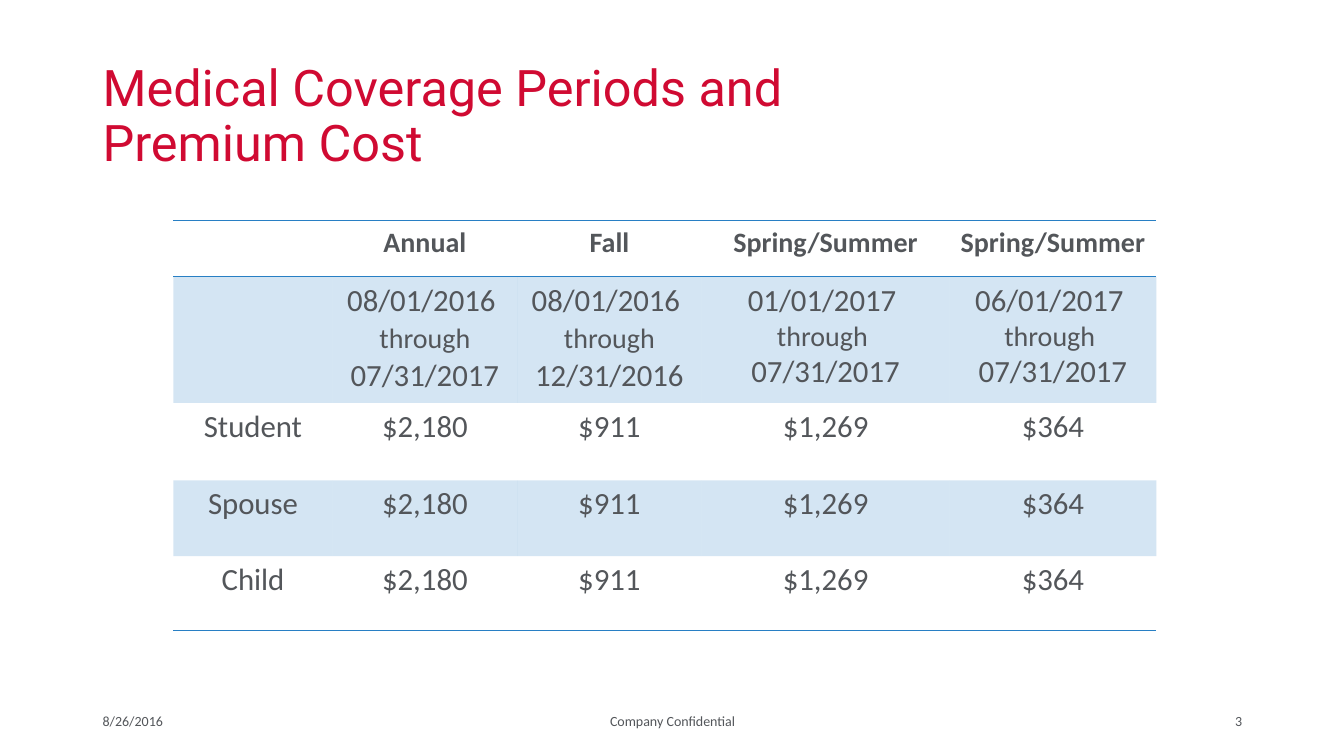
from dataclasses import dataclass

from lxml.etree import SubElement
from pptx import Presentation
from pptx.dml.color import RGBColor
from pptx.enum.text import MSO_ANCHOR, PP_ALIGN
from pptx.oxml.ns import qn
from pptx.util import Emu, Inches, Pt

SLIDE_WIDTH, SLIDE_HEIGHT = Inches(13.33), Inches(7.5)
NO_STYLE_NO_GRID = "{2D5ABB26-0587-4C30-8999-92F81FD0307C}"


@dataclass(frozen=True)
class Theme:
    red: str = "D00A32"
    gray: str = "53565A"
    blue: str = "287FC4"
    band_opacity: int = 20  # percent
    rule_width: int = 1
    heading_font: str = "Roboto"
    body_font: str = "Calibri"
    title: int = 36
    header: int = 20
    body: int = 22
    footer: int = 10


THEME = Theme()


@dataclass(frozen=True)
class Span:
    text: str
    size: int = THEME.body
    bold: bool = False
    font: str = THEME.body_font
    color: str = THEME.gray
    break_after: bool = False


Line = list[Span]


@dataclass(frozen=True)
class TextBlock:
    """Text in a box whose place is given in percent of the slide."""
    left: float
    top: float
    width: float
    height: float
    lines: list[Line]
    align: PP_ALIGN = PP_ALIGN.LEFT
    anchor: MSO_ANCHOR = MSO_ANCHOR.MIDDLE
    spacing: float = 1.0


def across(share: float) -> Emu:
    return Emu(round(SLIDE_WIDTH * share / 100))


def down(share: float) -> Emu:
    return Emu(round(SLIDE_HEIGHT * share / 100))


def apply(target, values: dict) -> None:
    for name, value in values.items():
        setattr(target, name, value)


def write_lines(frame, lines: list[Line], align: PP_ALIGN, spacing: float = 1.0) -> None:
    for index, line in enumerate(lines):
        para = frame.add_paragraph() if index else frame.paragraphs[0]
        apply(para, {"alignment": align, "line_spacing": spacing})
        for span in line:
            run = para.add_run()
            run.text = span.text
            apply(run.font, {"size": Pt(span.size), "bold": span.bold, "name": span.font})
            run.font.color.rgb = RGBColor.from_string(span.color)
            if span.break_after:
                para.add_line_break()


def draw_text(page, block: TextBlock) -> None:
    box = page.shapes.add_textbox(across(block.left), down(block.top),
                                  across(block.width), down(block.height))
    apply(box.text_frame, {"word_wrap": True, "vertical_anchor": block.anchor})
    write_lines(box.text_frame, block.lines, block.align, block.spacing)


def rule_cell(cell, edges: tuple[str, ...]) -> None:
    properties = cell._tc.get_or_add_tcPr()
    for position, edge in enumerate(edges):
        line = SubElement(properties, qn(f"a:{edge}"), w=str(Pt(THEME.rule_width)))
        fill = SubElement(line, qn("a:solidFill"))
        SubElement(fill, qn("a:srgbClr"), val=THEME.blue)
        properties.insert(position, line)


def fill_cell(cell, banded: bool) -> None:
    if not banded:
        cell.fill.background()
        return
    cell.fill.solid()
    cell.fill.fore_color.rgb = RGBColor.from_string(THEME.blue)
    color = cell._tc.tcPr.find(qn("a:solidFill")).find(qn("a:srgbClr"))
    SubElement(color, qn("a:alpha"), val=str(THEME.band_opacity * 1000))


def draw_table(page, left: float, top: float, columns: list[float],
               rows: list[float], cells: list[list[list[Line]]]) -> None:
    frame = page.shapes.add_table(len(rows), len(columns), across(left), down(top),
                                  across(sum(columns)), down(sum(rows)))
    table = frame.table
    apply(table, {"first_row": False, "horz_banding": False})
    table._tbl.tblPr.find(qn("a:tableStyleId")).text = NO_STYLE_NO_GRID
    for column, share in zip(table.columns, columns):
        column.width = across(share)
    for row, share in zip(table.rows, rows):
        row.height = down(share)
    edges = {0: ("lnT", "lnB"), len(rows) - 1: ("lnB",)}
    for row_index, row_cells in enumerate(cells):
        for column_index, lines in enumerate(row_cells):
            cell = table.cell(row_index, column_index)
            write_lines(cell.text_frame, lines, PP_ALIGN.CENTER)
            fill_cell(cell, banded=row_index % 2 == 1)
            rule_cell(cell, edges.get(row_index, ()))


def wrapped_period(start: str, end: str) -> list[Line]:
    return [[Span(f"{start} ")], [Span("through", THEME.header), Span(f" {end}")]]


def stacked_period(start: str, end: str) -> list[Line]:
    return [[Span(f"{start} ")], [Span("through ", THEME.header)], [Span(end)]]


def heading(text: str, break_after: bool = False) -> Span:
    return Span(text, THEME.title, font=THEME.heading_font, color=THEME.red,
                break_after=break_after)


# Content
TERMS = ["Annual", "Fall", "Spring/Summer", "Spring/Summer"]
PERIODS = [
    wrapped_period("08/01/2016", "07/31/2017"),
    wrapped_period("08/01/2016", "12/31/2016"),
    stacked_period("01/01/2017", "07/31/2017"),
    stacked_period("06/01/2017", "07/31/2017"),
]
MEMBERS = ["Student", "Spouse", "Child"]
PREMIUMS = ["$2,180", "$911", "$1,269", "$364"]

TITLE = TextBlock(
    6.9, 7.73, 71.2, 19.33,
    [[heading("Medical Coverage Periods and ", break_after=True), heading("Premium Cost")]],
    anchor=MSO_ANCHOR.TOP, spacing=0.9)
FOOTERS = [
    TextBlock(left, 92.67, width, 5.33, [[Span(text, THEME.footer)]], align)
    for left, width, text, align in [
        (6.9, 22.5, "8/26/2016", PP_ALIGN.LEFT),
        (33.16, 33.76, "Company Confidential", PP_ALIGN.CENTER),
        (70.67, 22.5, "3", PP_ALIGN.RIGHT),
    ]
]


def main() -> None:
    deck = Presentation()
    apply(deck, {"slide_width": SLIDE_WIDTH, "slide_height": SLIDE_HEIGHT})
    page = deck.slides.add_slide(deck.slide_layouts[6])

    # Title and footer
    for block in [TITLE, *FOOTERS]:
        draw_text(page, block)

    # Premium table
    header = [[], *([[Span(term, THEME.header, bold=True)]] for term in TERMS)]
    cells = [header, [[], *PERIODS]]
    cells += [[[[Span(text)]] for text in [member, *PREMIUMS]] for member in MEMBERS]
    draw_table(page, 12.9, 29.15, [11.85, 13.73, 13.73, 18.45, 15.38],
               [7.47, 16.67, 10.27, 10, 9.87], cells)

    deck.save("out.pptx")


if __name__ == "__main__":
    main()
